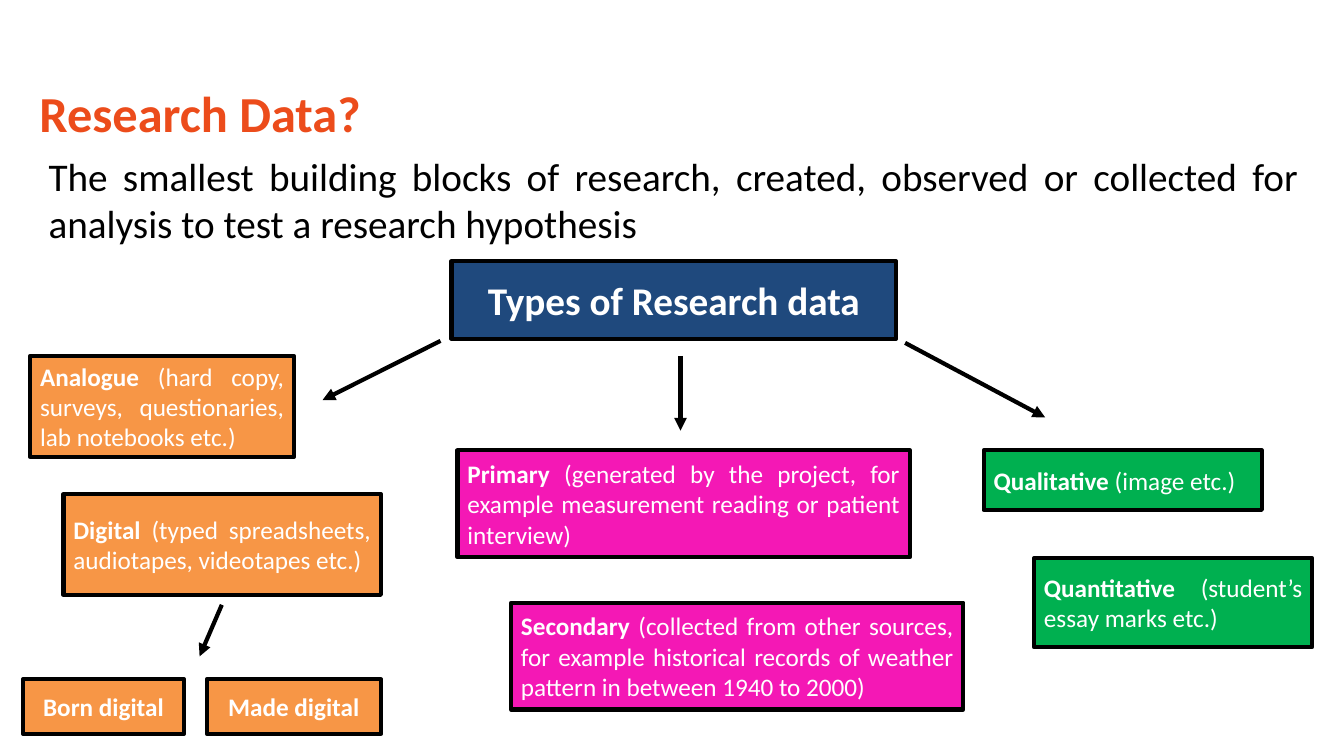
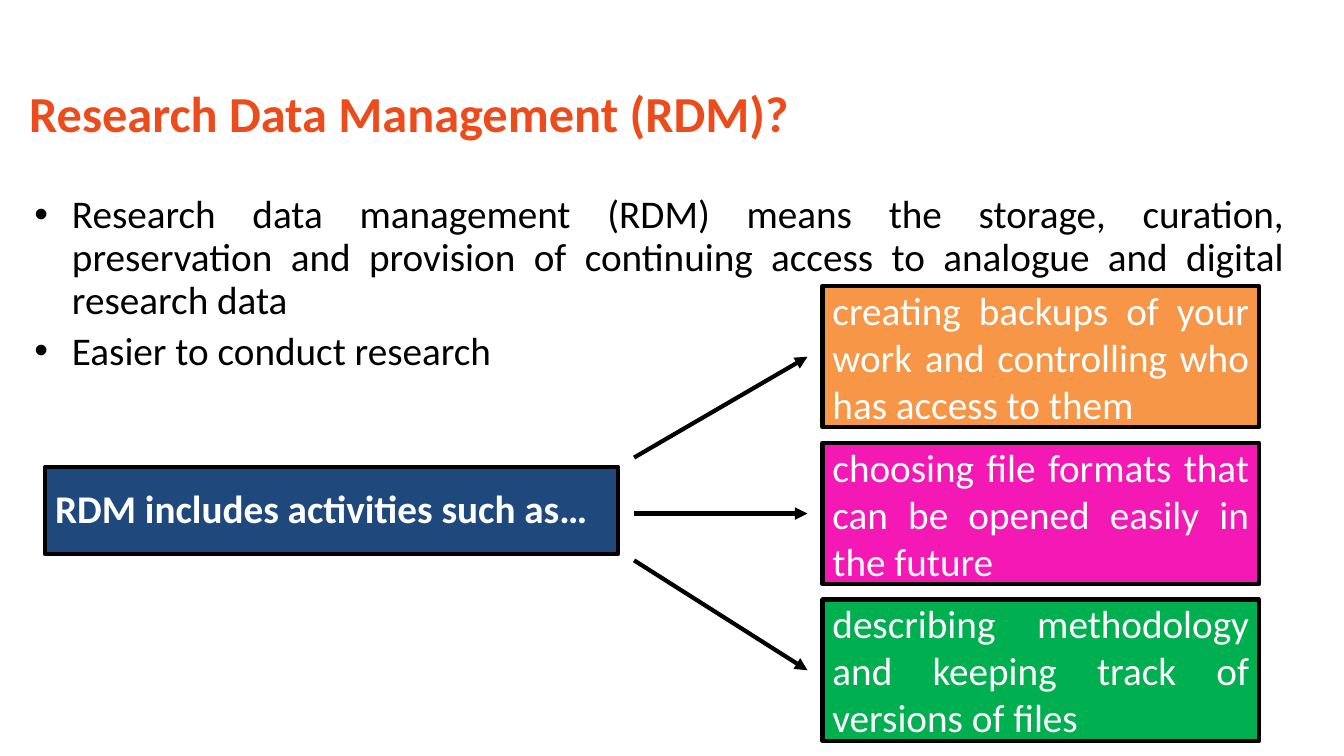
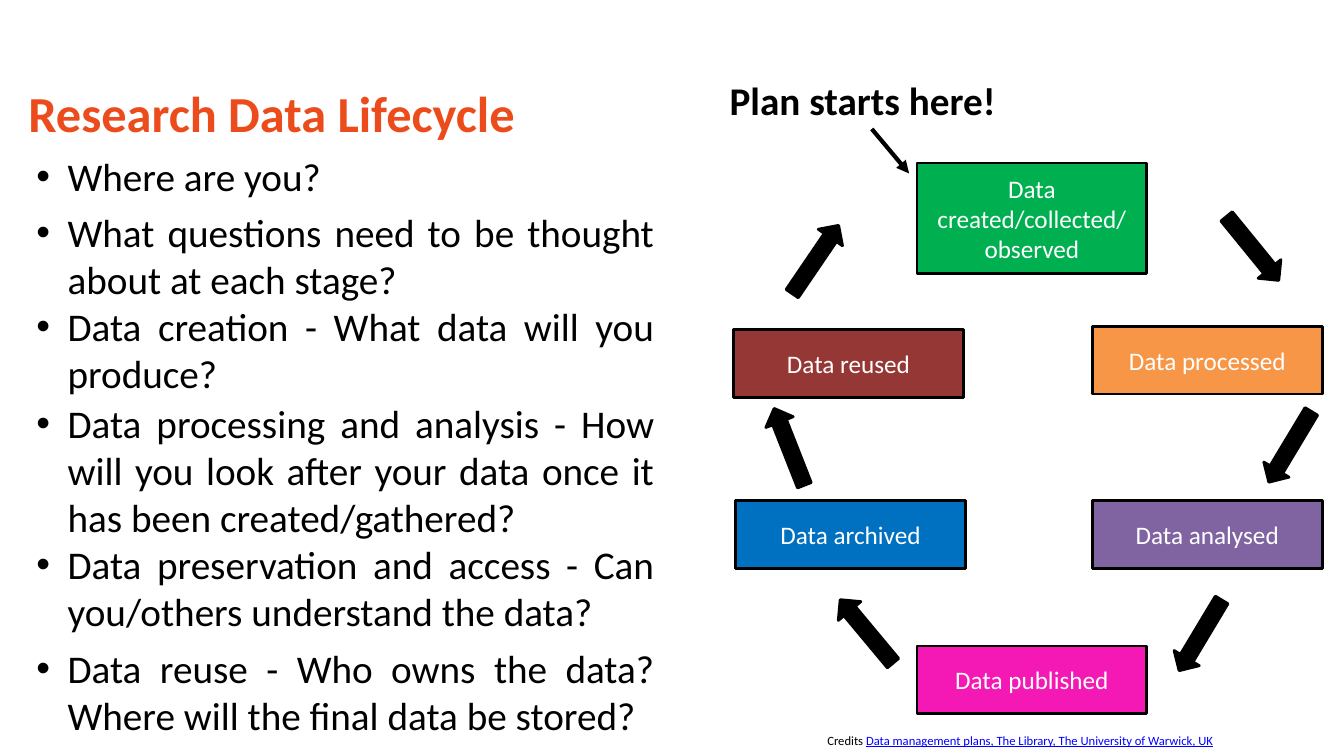
"""Build three slides on research data, its management and its lifecycle."""
from dataclasses import dataclass

from pptx import Presentation
from pptx.dml.color import RGBColor
from pptx.enum.shapes import MSO_CONNECTOR, MSO_SHAPE
from pptx.enum.text import MSO_ANCHOR, MSO_AUTO_SIZE, PP_ALIGN
from pptx.oxml.ns import qn
from pptx.util import Cm, Pt
from lxml import etree

LEFT, CENTER, JUSTIFY = PP_ALIGN.LEFT, PP_ALIGN.CENTER, PP_ALIGN.JUSTIFY
TOP, MIDDLE = MSO_ANCHOR.TOP, MSO_ANCHOR.MIDDLE
RECTANGLE, RIGHT_ARROW = MSO_SHAPE.RECTANGLE, MSO_SHAPE.RIGHT_ARROW
STRAIGHT = MSO_CONNECTOR.STRAIGHT
NO_AUTOFIT = MSO_AUTO_SIZE.NONE


@dataclass(frozen=True)
class Theme:
    font: str = "Calibri"
    heading: str = "EC4C1B"
    black: str = "000000"
    white: str = "FFFFFF"
    link: str = "0000FF"
    navy: str = "1F497D"
    orange: str = "F79646"
    pink: str = "F418B5"
    green: str = "00B050"
    purple: str = "8064A2"
    blue: str = "0070C0"
    brown: str = "953735"
    title_size: int = 36
    text_size: int = 28
    label_size: int = 18
    credit_size: int = 9
    thick: int = 3
    thin: int = 2


THEME = Theme()
BOLD = {"bold": True}
LINK = {"underline": True, "color": THEME.link}

DEFINITION = ("The smallest building blocks of research, created, observed or "
              "collected for analysis to test a research hypothesis")
DATA_ROOT = ("Types of Research data", (11.38, 6.58, 11.2, 1.96))
DATA_TYPES = [
    ("Analogue ", "(hard copy, surveys, questionaries, lab notebooks etc.)",
     THEME.orange, (0.76, 8.97, 6.65, 2.54)),
    ("Digital ", "(typed spreadsheets, audiotapes, videotapes etc.)",
     THEME.orange, (1.6, 12.45, 8, 2.54)),
    ("Primary ", "(generated by the project, for example measurement reading "
     "or patient interview)", THEME.pink, (11.53, 11.35, 11.4, 2.69)),
    ("Secondary ", "(collected from other sources, for example historical "
     "records of weather pattern in between 1940 to 2000)",
     THEME.pink, (12.88, 15.19, 11.4, 2.69)),
    ("Qualitative ", "(image etc.)", THEME.green, (24.79, 11.35, 7.01, 1.5)),
    ("Quantitative ", "(student’s essay marks etc.)",
     THEME.green, (26.06, 14.07, 7.01, 2.24)),
]
DIGITAL_KINDS = [
    ("Born digital", (0.58, 17.12, 4.06, 1.37)),
    ("Made digital", (5.21, 17.12, 4.39, 1.37)),
]
TYPE_ARROWS = [
    (11.1, 8.59, 8.13, 10.08),
    (5.59, 15.24, 5.03, 16.54),
    (17.15, 8.97, 17.15, 10.85),
    (22.81, 8.64, 26.34, 10.52),
]

RDM_POINTS = [
    ("Research data management (RDM) means the storage, curation, preservation "
     "and provision of continuing access to analogue and digital research data", 0),
    ("Easier to conduct research", 5.6),
]
RDM_ROOT = ("RDM includes activities such as…", (1.14, 11.76, 14.43, 2.21))
ACTIVITIES = [
    ("creating backups of your work and controlling who has access to them",
     THEME.orange, 11.53),
    ("choosing file formats that can be opened easily in the future",
     THEME.pink, 12.94),
    ("describing methodology and keeping track of versions of files",
     THEME.green, 14.12),
]
ACTIVITY_LEFT, ACTIVITY_TOP, ACTIVITY_STEP = 20.73, 7.21, 3.95
ACTIVITY_WIDTH, ACTIVITY_HEIGHT = 11, 3.56
ACTIVITY_ARROW_START, ACTIVITY_ARROW_END = 15.98, 20.35

STAGE_QUESTIONS = [
    ("Where are you?", 0),
    ("What questions need to be thought about at each stage?", 6.5),
    ("Data creation - What data will you produce?", 0),
    ("Data processing and analysis - How will you look after your data once it "
     "has been created/gathered?", 2),
    ("Data preservation and access - Can you/others understand the data?", 0),
    ("Data reuse - Who owns the data? Where will the final data be stored?", 7),
]
STAGE_WIDTH, STAGE_HEIGHT = 5.79, 1.7
ARROW_WIDTH, ARROW_HEIGHT = 2.08, 0.74
LIFECYCLE = [
    (["Data created/collected/", "observed"], THEME.green, (23.11, 4.11), 2.79,
     (31.57, 6.26, 50.8)),
    (["Data processed"], THEME.orange, (27.53, 8.23), STAGE_HEIGHT,
     (32.51, 11.26, 121)),
    (["Data analysed"], THEME.purple, (27.53, 12.62), STAGE_HEIGHT,
     (30.25, 16.01, 121)),
    (["Data published"], THEME.pink, (23.11, 16.28), STAGE_HEIGHT,
     (21.84, 15.91, 230.2)),
    (["Data archived"], THEME.blue, (18.54, 12.62), STAGE_HEIGHT,
     (19.89, 11.26, 248.5)),
    (["Data reused"], THEME.brown, (18.49, 8.31), STAGE_HEIGHT,
     (20.55, 6.54, 304.2)),
]
CREDITS = [("Credits ", {}),
           ("Data management plans, The Library, The University of Warwick, UK", LINK)]


def set_attributes(target, values):
    for name, value in values.items():
        setattr(target, name, value)


def place(shape, frame):
    set_attributes(shape, dict(zip(("left", "top", "width", "height"), map(Cm, frame))))


def write(shape, paragraphs, size, color, align=JUSTIFY, anchor=TOP):
    frame = shape.text_frame
    set_attributes(frame, {"word_wrap": True, "auto_size": NO_AUTOFIT,
                           "vertical_anchor": anchor})
    for index, runs in enumerate(paragraphs):
        paragraph = frame.add_paragraph() if index else frame.paragraphs[0]
        set_attributes(paragraph, {"alignment": align, "space_before": Pt(0)})
        for text, changes in runs:
            style = {"name": THEME.font, "size": Pt(size), "bold": False, **changes}
            run_color = style.pop("color", color)
            run = paragraph.add_run()
            run.text = text
            set_attributes(run.font, style)
            run.font.color.rgb = RGBColor.from_string(run_color)
    return frame.paragraphs


def add_titled_slide(presentation, title, left):
    slide = presentation.slides.add_slide(presentation.slide_layouts[1])
    place(slide.shapes.title, (left, 1.93, 23.4, 1.8))
    write(slide.shapes.title, [[(title, BOLD)]], THEME.title_size, THEME.heading, LEFT)
    return slide


def fill_body(slide, frame, items, indent=0.0, line_spacing=1.0):
    body = slide.placeholders[1]
    place(body, frame)
    paragraphs = write(body, [[(text, {})] for text, _ in items],
                       THEME.text_size, THEME.black)
    for paragraph, (_, space) in zip(paragraphs, items):
        set_attributes(paragraph, {"space_before": Pt(space),
                                   "line_spacing": line_spacing})
        properties = paragraph._p.get_or_add_pPr()
        properties.set("marL", str(Cm(indent)))
        properties.set("indent", str(-Cm(indent)))
        if not indent:
            etree.SubElement(properties, qn("a:buNone"))


def add_filled(slide, preset, frame, color, line_width):
    shape = slide.shapes.add_shape(preset, *map(Cm, frame))
    shape.shadow.inherit = False
    shape.fill.solid()
    shape.fill.fore_color.rgb = RGBColor.from_string(color)
    shape.line.color.rgb = RGBColor.from_string(THEME.black)
    shape.line.width = Pt(line_width)
    return shape


def add_box(slide, frame, color, paragraphs, size, align=JUSTIFY, line_width=THEME.thick):
    box = add_filled(slide, RECTANGLE, frame, color, line_width)
    return write(box, paragraphs, size, THEME.white, align, MIDDLE)


def add_arrow(slide, ends):
    arrow = slide.shapes.add_connector(STRAIGHT, *map(Cm, ends))
    arrow.line.color.rgb = RGBColor.from_string(THEME.black)
    arrow.line.width = Pt(THEME.thick)
    etree.SubElement(arrow.line._get_or_add_ln(), qn("a:tailEnd"), type="triangle")
    etree.SubElement(arrow._element.spPr, qn("a:effectLst"))


def add_text(slide, frame, runs, size):
    box = slide.shapes.add_textbox(*map(Cm, frame))
    write(box, [runs], size, THEME.black)


def build_data_types(presentation):
    slide = add_titled_slide(presentation, "Research Data?", 0.74)
    fill_body(slide, (0.97, 3.71, 32, 2.41), [(DEFINITION, 0)])
    text, frame = DATA_ROOT
    add_box(slide, frame, THEME.navy, [[(text, BOLD)]], THEME.text_size, CENTER)
    for name, detail, color, frame in DATA_TYPES:
        add_box(slide, frame, color, [[(name, BOLD), (detail, {})]], THEME.label_size)
    for name, frame in DIGITAL_KINDS:
        add_box(slide, frame, THEME.orange, [[(name, BOLD)]], THEME.label_size, CENTER)
    for ends in TYPE_ARROWS:
        add_arrow(slide, ends)


def build_management(presentation):
    slide = add_titled_slide(presentation, "Research Data Management (RDM)?", 0.48)
    fill_body(slide, (0.61, 4.78, 32, 3.76), RDM_POINTS, 0.95, 0.91)
    text, frame = RDM_ROOT
    root = add_box(slide, frame, THEME.navy, [[(text, BOLD)]], THEME.text_size)
    root[0].line_spacing = 0.91
    for index, (text, color, arrow_start) in enumerate(ACTIVITIES):
        top = ACTIVITY_TOP + index * ACTIVITY_STEP
        add_box(slide, (ACTIVITY_LEFT, top, ACTIVITY_WIDTH, ACTIVITY_HEIGHT), color,
                [[(text, {})]], THEME.text_size)
        add_arrow(slide, (ACTIVITY_ARROW_START, arrow_start,
                          ACTIVITY_ARROW_END, top + ACTIVITY_HEIGHT / 2))


def build_lifecycle(presentation):
    slide = add_titled_slide(presentation, "Research Data Lifecycle", 0.46)
    fill_body(slide, (0.66, 3.71, 16.08, 15.26), STAGE_QUESTIONS, 0.79)
    add_text(slide, (18.14, 1.8, 7.67, 1.45), [("Plan starts here!", BOLD)],
             THEME.text_size)
    add_arrow(slide, (21.97, 3.25, 22.91, 4.37))
    for lines, color, corner, height, (center_x, center_y, angle) in LIFECYCLE:
        add_box(slide, (*corner, STAGE_WIDTH, height), color,
                [[(line, {})] for line in lines], THEME.label_size, CENTER, THEME.thin)
        frame = (center_x - ARROW_WIDTH / 2, center_y - ARROW_HEIGHT / 2,
                 ARROW_WIDTH, ARROW_HEIGHT)
        arrow = add_filled(slide, RIGHT_ARROW, frame, THEME.black, THEME.thin)
        arrow.rotation = angle
    add_text(slide, (20.6, 18.34, 10.39, 0.64), CREDITS, THEME.credit_size)


def main():
    presentation = Presentation()
    set_attributes(presentation, {"slide_width": Cm(33.87), "slide_height": Cm(19.05)})
    for build in (build_data_types, build_management, build_lifecycle):
        build(presentation)
    presentation.save("out.pptx")


if __name__ == "__main__":
    main()
